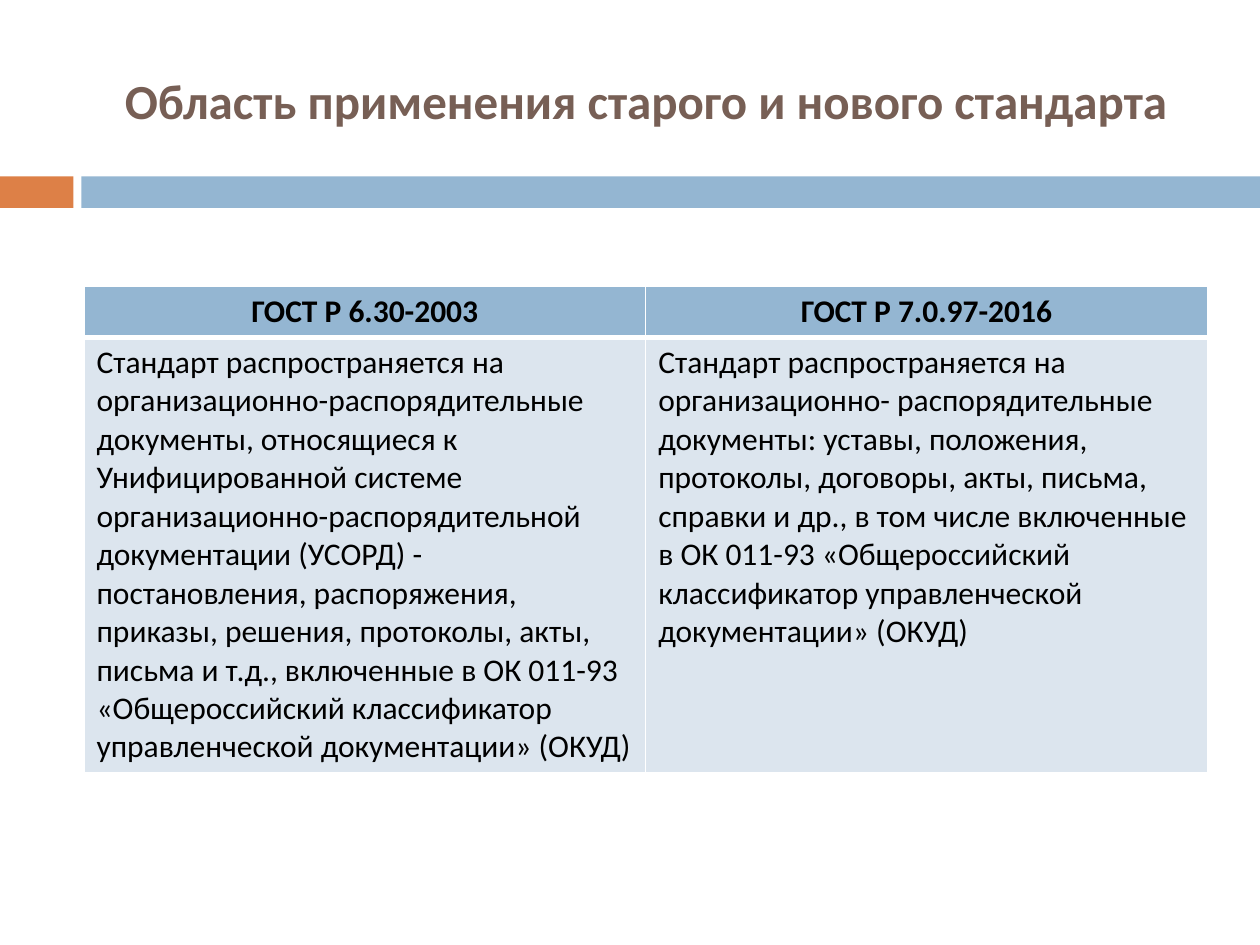
from lxml import etree
from pptx import Presentation
from pptx.dml.color import RGBColor
from pptx.enum import shapes, text
from pptx.oxml import ns
from pptx.util import Pt

ORANGE = RGBColor(0xDD, 0x80, 0x47)
BLUE = RGBColor(0x94, 0xB6, 0xD2)
PALE = RGBColor(0xDC, 0xE5, 0xEE)
BROWN = RGBColor(0x77, 0x5F, 0x55)
BLACK = RGBColor(0, 0, 0)
WHITE = RGBColor(0xFF, 0xFF, 0xFF)

TITLE = "Область применения старого и нового стандарта"
HEADERS = ("ГОСТ Р 6.30-2003", "ГОСТ Р 7.0.97-2016")
SCOPES = (
    "Стандарт распространяется на организационно-распорядительные документы, "
    "относящиеся к Унифицированной системе организационно-распорядительной "
    "документации (УСОРД) - постановления, распоряжения, приказы, решения, "
    "протоколы, акты, письма и т.д., включенные в ОК 011-93 «Общероссийский "
    "классификатор управленческой документации» (ОКУД)",
    "Стандарт распространяется на организационно- распорядительные документы: "
    "уставы, положения, протоколы, договоры, акты, письма, справки и др., в том "
    "числе включенные в ОК 011-93 «Общероссийский классификатор управленческой "
    "документации» (ОКУД)",
)


def write(tf, content, align, color, **fmt):
    """Put one formatted paragraph into a text frame."""
    p = tf.paragraphs[0]
    p.alignment = align
    r = p.add_run()
    r.text = content
    for name, value in {"name": "Calibri", **fmt}.items():
        setattr(r.font, name, value)
    r.font.color.rgb = color


def add_bar(slide, left, width, color):
    """Draw one piece of the band under the title."""
    sp = slide.shapes.add_shape(shapes.MSO_SHAPE.RECTANGLE,
                                Pt(left), Pt(100.8), Pt(width), Pt(18))
    sp.shadow.inherit = False
    sp.fill.solid()
    sp.fill.fore_color.rgb = color
    sp.line.fill.background()


def set_title(slide, content):
    """Move and format the title placeholder."""
    sp = slide.shapes.title
    box = {"left": 48, "top": 18, "width": 642, "height": 78}
    for name, value in box.items():
        setattr(sp, name, Pt(value))
    tf = sp.text_frame
    tf.word_wrap = True
    tf.vertical_anchor = text.MSO_ANCHOR.MIDDLE
    write(tf, content, text.PP_ALIGN.CENTER, BROWN, size=Pt(28), bold=True)


def set_borders(cell, **widths):
    """Give a cell white borders, with widths in points by side."""
    tcPr = cell._tc.get_or_add_tcPr()
    for i, side in enumerate("LRTB"):
        ln = etree.Element(ns.qn(f"a:ln{side}"), w=str(Pt(widths.get(side, 1))))
        fill = etree.SubElement(ln, ns.qn("a:solidFill"))
        etree.SubElement(fill, ns.qn("a:srgbClr"), val=str(WHITE))
        tcPr.insert(i, ln)


def add_comparison(slide):
    """Add the table that compares the two standards."""
    table = slide.shapes.add_table(2, 2, Pt(48), Pt(163.5), Pt(642), Pt(277)).table
    rows = (
        (HEADERS, 29, BLUE, text.PP_ALIGN.CENTER, True, {"B": 3}),
        (SCOPES, 248, PALE, text.PP_ALIGN.LEFT, False, {"T": 3}),
    )
    for i, (contents, height, color, align, bold, widths) in enumerate(rows):
        table.rows[i].height = Pt(height)
        for j, content in enumerate(contents):
            cell = table.cell(i, j)
            cell.fill.solid()
            cell.fill.fore_color.rgb = color
            set_borders(cell, **widths)
            write(cell.text_frame, content, align, BLACK, size=Pt(18), bold=bold)


def main():
    """Build the slide and save it."""
    prs = Presentation()
    prs.slide_width, prs.slide_height = Pt(720), Pt(540)
    slide = prs.slides.add_slide(prs.slide_layouts[5])
    add_bar(slide, 0, 42, ORANGE)
    add_bar(slide, 46.5, 673.5, BLUE)
    set_title(slide, TITLE)
    add_comparison(slide)
    prs.save("out.pptx")


if __name__ == "__main__":
    main()
